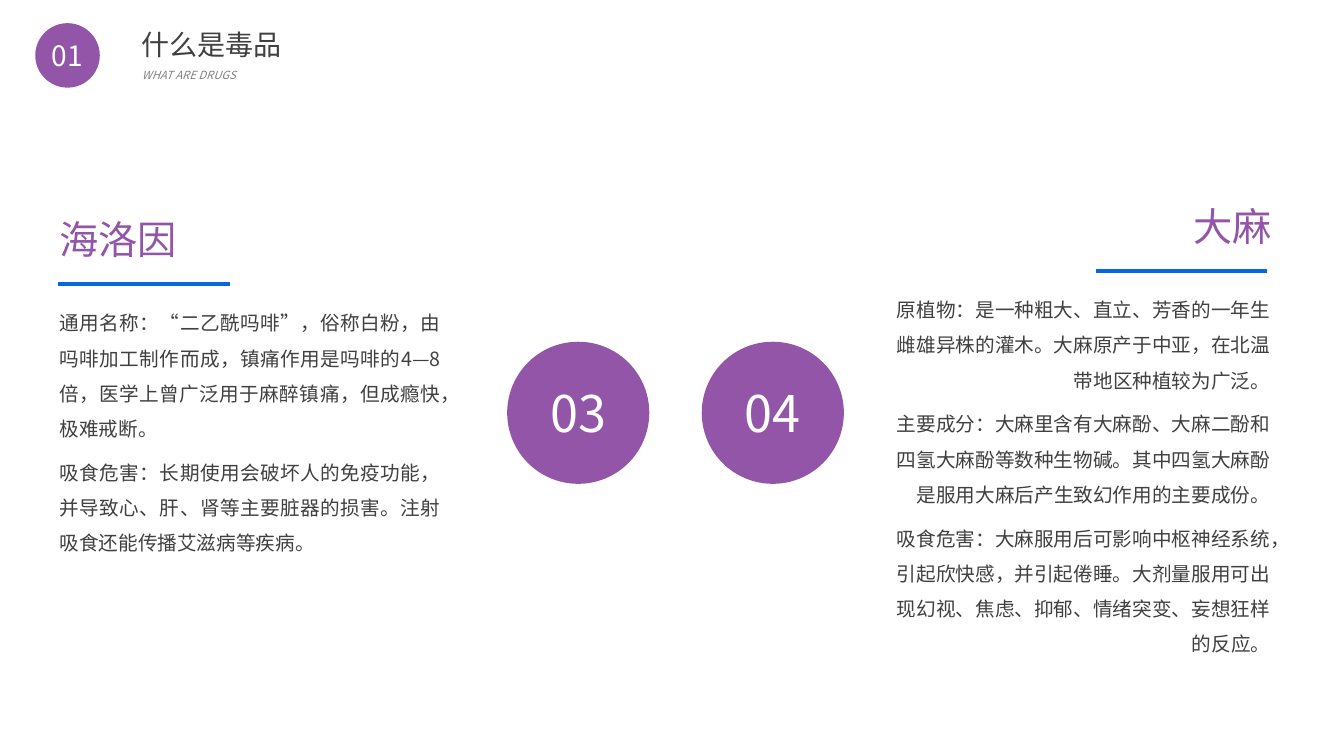
import pptx
import pptx.util
import pptx.dml.color
import pptx.enum.shapes
import pptx.enum.text
import pptx.oxml
import pptx.oxml.ns

# Content
TITLE = "什么是毒品"
SUBTITLE = "WHAT ARE DRUGS"
HEROIN = [
    "通用名称：“二乙酰吗啡”，俗称白粉，由吗啡加工制作而成，镇痛作用是吗啡的4—8倍，医学上曾广泛用于麻醉镇痛，但成瘾快，极难戒断。",
    "吸食危害：长期使用会破坏人的免疫功能，并导致心、肝、肾等主要脏器的损害。注射吸食还能传播艾滋病等疾病。",
]
CANNABIS = [
    "原植物：是一种粗大、直立、芳香的一年生雌雄异株的灌木。大麻原产于中亚，在北温带地区种植较为广泛。",
    "主要成分：大麻里含有大麻酚、大麻二酚和四氢大麻酚等数种生物碱。其中四氢大麻酚是服用大麻后产生致幻作用的主要成份。",
    "吸食危害：大麻服用后可影响中枢神经系统，引起欣快感，并引起倦睡。大剂量服用可出现幻视、焦虑、抑郁、情绪突变、妄想狂样的反应。",
]
# heading, paragraphs, alignments, top, heading and body (left, width), rule (start, end), body height
TOPICS = [
    ("海洛因", HEROIN, ("LEFT", "JUSTIFY"), 2.09, (0.49, 4.25), (0.49, 3.98), (0.58, 2.28), 2.63),
    ("大麻", CANNABIS, ("RIGHT", "RIGHT"), 1.96, (9.08, 3.63), (8.69, 4.01), (12.57, 10.87), 3.77),
]
# number, left, top, diameter, text size
CIRCLES = [("01", 0.35, 0.23, 0.64, 20), ("03", 5.03, 3.39, 1.41, 36), ("04", 6.96, 3.39, 1.41, 36)]

FONT = "Noto Sans CJK SC"
PURPLE, BLUE, DARK, GRAY, WHITE = "9355A8", "0568DF", "404040", "808080", "FFFFFF"
RULE_DROP, BODY_DROP = 0.73, 0.83
inch = pptx.util.Inches


def color(value):
    return pptx.dml.color.RGBColor.from_string(value)


def place(box, left, top, width, height):
    box.left, box.top, box.width, box.height = map(inch, (left, top, width, height))
    return box


def write(box, texts, size, fill, align="LEFT", italic=False, line=1.0, after=0, anchor="TOP", wrap=True):
    frame = box.text_frame
    frame.word_wrap = wrap
    frame.vertical_anchor = pptx.enum.text.MSO_ANCHOR[anchor]
    frame.auto_size = pptx.enum.text.MSO_AUTO_SIZE.NONE
    for number, text in enumerate(texts):
        para = frame.add_paragraph() if number else frame.paragraphs[0]
        para.alignment = pptx.enum.text.PP_ALIGN[align]
        para.line_spacing = line
        para.space_before, para.space_after = pptx.util.Pt(0), pptx.util.Pt(after)
        # No bullet and no hanging indent
        props = para._p.get_or_add_pPr()
        props.set("marL", "0")
        props.set("indent", "0")
        props.append(pptx.oxml.parse_xml("<a:buNone %s/>" % pptx.oxml.ns.nsdecls("a")))
        span = para.add_run()
        span.text = text
        font = span.font
        font.name, font.size = FONT, pptx.util.Pt(size)
        font.bold, font.italic = False, italic
        font.color.rgb = color(fill)
        # East Asian face
        east = pptx.oxml.parse_xml('<a:ea %s typeface="%s"/>' % (pptx.oxml.ns.nsdecls("a"), FONT))
        font._element.find(pptx.oxml.ns.qn("a:latin")).addnext(east)


deck = pptx.Presentation()
deck.slide_width, deck.slide_height = inch(13.33), inch(7.5)
page = deck.slides.add_slide(deck.slide_layouts.get_by_name("Comparison"))
slots = page.placeholders

# Page title and subtitle
write(place(page.shapes.title, 1.3, 0.22, 2.5, 0.5), [TITLE], 20, DARK)
subtitle = page.shapes.add_textbox(inch(1.31), inch(0.63), inch(2.54), inch(0.25))
write(subtitle, [SUBTITLE], 8, GRAY, italic=True)

# Numbered circles
for label, left, top, size, points in CIRCLES:
    circle = page.shapes.add_shape(
        pptx.enum.shapes.MSO_SHAPE.OVAL, inch(left), inch(top), inch(size), inch(size))
    circle.shadow.inherit = False
    circle.fill.solid()
    circle.fill.fore_color.rgb = color(PURPLE)
    circle.line.fill.background()
    write(circle, [label], points, WHITE, align="CENTER", anchor="MIDDLE", wrap=False)

# Topic columns: heading, rule, body
for column, (heading, texts, aligns, top, head, body, rule, height) in enumerate(TOPICS):
    head_slot, body_slot = slots[1 + 2 * column], slots[2 + 2 * column]
    write(place(head_slot, head[0], top, head[1], 0.57), [heading], 28, PURPLE, align=aligns[0])
    write(place(body_slot, body[0], top + BODY_DROP, body[1], height), texts, 14, DARK,
          align=aligns[1], line=1.5, after=6)
    y = inch(top + RULE_DROP)
    bar = page.shapes.add_connector(
        pptx.enum.shapes.MSO_CONNECTOR.STRAIGHT, inch(rule[0]), y, inch(rule[1]), y)
    bar.line.color.rgb = color(BLUE)
    bar.line.width = pptx.util.Pt(3)
    bar._element.spPr.append(pptx.oxml.parse_xml("<a:effectLst %s/>" % pptx.oxml.ns.nsdecls("a")))

deck.save("out.pptx")
